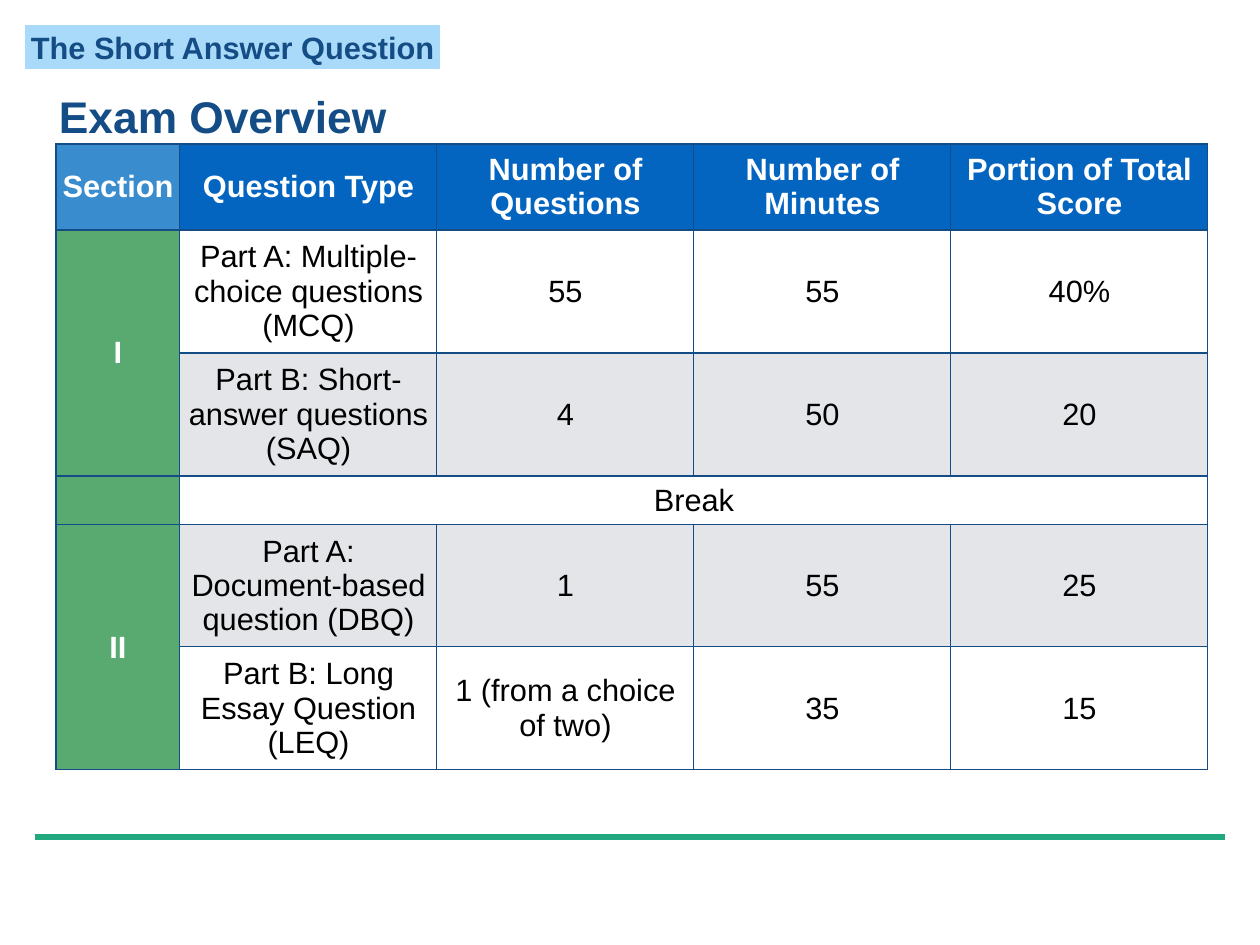
"""Build the exam overview slide with its table of sections and question types."""
from lxml import etree
from pptx import Presentation
from pptx import util as u
from pptx.dml.color import RGBColor
from pptx.enum import shapes, text
from pptx.oxml import parse_xml
from pptx.oxml.ns import nsdecls, qn

TAG = "The Short Answer Question"
TITLE = "Exam Overview"
ROWS = [
    ["Section", "Question Type", "Number of Questions", "Number of Minutes", "Portion of Total Score"],
    ["I", "Part A: Multiple- choice questions\v(MCQ)", "55", "55", "40%"],
    ["", "Part B: Short-answer questions\v(SAQ)", "4", "50", "20"],
    ["", "Break", "", "", ""],
    ["II", "Part A: Document-based question (DBQ)", "1", "55", "25"],
    ["", "Part B: Long Essay Question\v(LEQ)", "1 (from a choice of two)", "35", "15"],
]
MERGES = [((1, 0), (2, 0)), ((3, 1), (3, 4)), ((4, 0), (5, 0))]
COLUMN_WIDTHS = [124] + [257] * 4
ROW_HEIGHTS = [86, 123, 123, 49, 122, 123]

NAVY, WHITE, BLACK = "144D85", "FFFFFF", "000000"
SKY, BLUE, LIGHT_BLUE = "AADAF9", "0365C0", "398CCE"
GREEN, GRAY, TEAL = "58AA71", "E3E5E8", "21A87E"
INSET = 5


def px(length):
    return u.Emu(length * 10320)


def color(value):
    return RGBColor.from_string(value)


def place(shape, left, top, width, height):
    shape.left, shape.top = px(left), px(top)
    shape.width, shape.height = px(width), px(height)


def write(frame, words, size=25, ink=BLACK, bold=False, align=text.PP_ALIGN.CENTER):
    frame.text = words
    for paragraph in frame.paragraphs:
        paragraph.alignment = align
        for run in paragraph.runs:
            run.font.name, run.font.size, run.font.bold = "Arial", u.Pt(size), bold
            run.font.color.rgb = color(ink)


def set_insets(holder):
    holder.margin_left = holder.margin_right = px(INSET)
    holder.margin_top = holder.margin_bottom = px(INSET)
    holder.vertical_anchor = text.MSO_ANCHOR.MIDDLE


def add_borders(cell):
    properties = cell._tc.get_or_add_tcPr()
    for side in ("lnL", "lnR", "lnT", "lnB"):
        properties.append(parse_xml(
            f'<a:{side} {nsdecls("a")} w="{u.Pt(1)}"><a:solidFill>'
            f'<a:srgbClr val="{NAVY}"/></a:solidFill></a:{side}>'))


def cell_fill(row, column):
    if row == 0:
        return BLUE if column else LIGHT_BLUE
    if column == 0:
        return GREEN
    return WHITE if row % 2 else GRAY


def add_tag(slide):
    tag = slide.shapes.add_shape(shapes.MSO_SHAPE.RECTANGLE, 0, 0, 0, 0)
    place(tag, 25, 25, 415, 44)
    tag.shadow.inherit = False
    tag.fill.solid()
    tag.fill.fore_color.rgb = color(SKY)
    tag.line.fill.background()
    set_insets(tag.text_frame)
    tag.text_frame.word_wrap = False
    write(tag.text_frame, TAG, ink=NAVY, bold=True)


def add_rule(slide):
    rule = slide.shapes.add_connector(
        shapes.MSO_CONNECTOR.STRAIGHT, px(35), px(837), px(1225), px(837))
    rule.line.color.rgb = color(TEAL)
    rule.line.width = u.Pt(5)
    etree.SubElement(rule._element.spPr, qn("a:effectLst"))


def add_title(slide):
    title = slide.shapes.title
    place(title, 54, 86, 345, 60)
    set_insets(title.text_frame)
    title.text_frame.auto_size = text.MSO_AUTO_SIZE.NONE
    title.text_frame.word_wrap = True
    write(title.text_frame, TITLE, size=36, ink=NAVY, bold=True, align=text.PP_ALIGN.LEFT)


def add_exam_table(slide):
    table = slide.shapes.add_table(
        len(ROWS), len(COLUMN_WIDTHS), px(56), px(144),
        px(sum(COLUMN_WIDTHS)), px(sum(ROW_HEIGHTS))).table
    for column, width in zip(table.columns, COLUMN_WIDTHS):
        column.width = px(width)
    for row, height in zip(table.rows, ROW_HEIGHTS):
        row.height = px(height)
    for row, words_in_row in enumerate(ROWS):
        for column, words in enumerate(words_in_row):
            cell = table.cell(row, column)
            set_insets(cell)
            add_borders(cell)
            cell.fill.solid()
            cell.fill.fore_color.rgb = color(cell_fill(row, column))
            heading = row == 0 or column == 0
            write(cell.text_frame, words, ink=WHITE if heading else BLACK, bold=heading)
    for first, last in MERGES:
        table.cell(*first).merge(table.cell(*last))


def main():
    presentation = Presentation()
    presentation.slide_width, presentation.slide_height = px(1260), px(945)
    slide = presentation.slides.add_slide(presentation.slide_layouts[5])
    add_tag(slide)
    add_rule(slide)
    add_title(slide)
    add_exam_table(slide)
    presentation.save("out.pptx")


if __name__ == "__main__":
    main()
